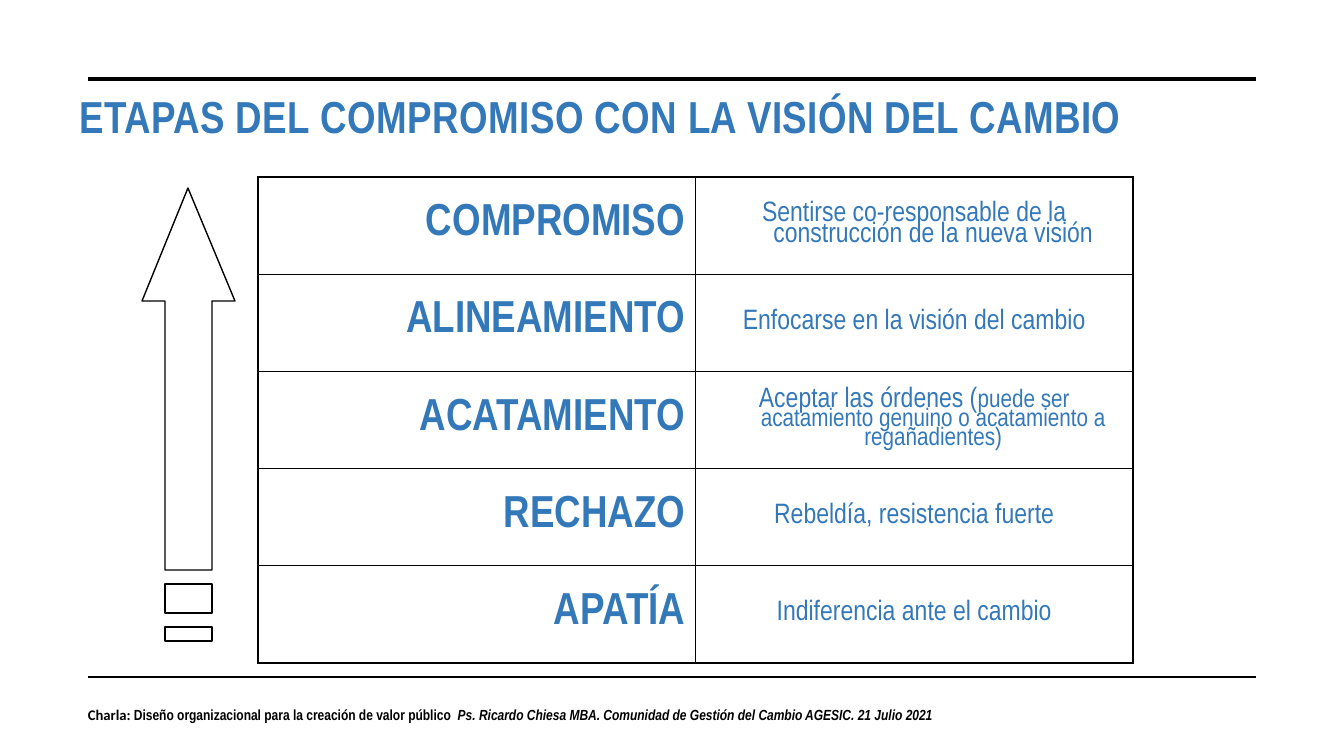
from lxml import etree
from pptx import Presentation
from pptx.dml.color import RGBColor
from pptx.enum.shapes import MSO_CONNECTOR
from pptx.enum.text import MSO_ANCHOR, MSO_AUTO_SIZE, PP_ALIGN
from pptx.oxml.ns import qn
from pptx.util import Pt

BLUE = RGBColor(0x33, 0x78, 0xB9)
BLACK = RGBColor(0, 0, 0)
WHITE = RGBColor(255, 255, 255)
LINE = MSO_CONNECTOR.STRAIGHT
TOP, MID = MSO_ANCHOR.TOP, MSO_ANCHOR.MIDDLE
CENTER, RIGHT = PP_ALIGN.CENTER, PP_ALIGN.RIGHT
FIXED = MSO_AUTO_SIZE.NONE
NARROW, SANS = "Arial Narrow", "Calibri"
SCALE = 914400 / 100.8

STAGES = [
    ("COMPROMISO", [("Sentirse co-responsable de la construcción de la nueva visión", 20)]),
    ("ALINEAMIENTO", [("Enfocarse en la visión del cambio", 20)]),
    ("ACATAMIENTO", [("Aceptar las órdenes (", 20),
                     ("puede ser acatamiento genuino o acatamiento a regañadientes)", 18)]),
    ("RECHAZO", [("Rebeldía, resistencia fuerte", 20)]),
    ("APATÍA", [("Indiferencia ante el cambio", 20)]),
]


def px(n):
    return round(n * SCALE)


def add_run(para, text, size, color, bold=False, italic=False, face=NARROW):
    run = para.add_run()
    run.text = text
    font = run.font
    font.name, font.size = face, Pt(size)
    font.bold, font.italic = bold, italic
    font.color.rgb = color
    return run


def add_rule(slide, x, y, w, weight):
    rule = slide.shapes.add_connector(LINE, px(x), px(y), px(x + w), px(y))
    rule.line.color.rgb = BLACK
    rule.line.width = Pt(weight)
    etree.SubElement(rule._element.spPr, qn("a:effectLst"))


def add_title(slide, x, y, w, h):
    title = slide.shapes.title
    title.left, title.top, title.width, title.height = map(px, (x, y, w, h))
    frame = title.text_frame
    frame.auto_size, frame.vertical_anchor = FIXED, TOP
    para = frame.paragraphs[0]
    para.alignment = CENTER
    run = add_run(para, "ETAPAS DEL COMPROMISO CON LA VISIÓN DEL CAMBIO", 32, BLUE, True)
    run.font._element.set("spc", "30")


def add_foot(slide, x, y, w, h):
    frame = slide.shapes.add_textbox(*map(px, (x, y, w, h))).text_frame
    frame.word_wrap = True
    para = frame.paragraphs[0]
    add_run(para, "Charla: ", 10.5, BLACK, True, face=SANS)
    add_run(para, "Diseño organizacional para la creación de valor público  ", 10.5, BLACK, True)
    add_run(para, "Ps. Ricardo Chiesa MBA. Comunidad de Gestión del Cambio AGESIC. 21 Julio 2021",
            10.5, BLACK, True, True)


def add_edges(cell):
    props = cell._tc.get_or_add_tcPr()
    for side in ("a:lnL", "a:lnR", "a:lnT", "a:lnB"):
        edge = etree.SubElement(props, qn(side), w=str(Pt(1)))
        fill = etree.SubElement(edge, qn("a:solidFill"))
        etree.SubElement(fill, qn("a:srgbClr"), val=str(BLACK))


def fill_cell(cell, align, runs, bold):
    add_edges(cell)
    cell.fill.background()
    cell.vertical_anchor = MID
    para = cell.text_frame.paragraphs[0]
    para.alignment, para.line_spacing = align, 0.8
    props = para._p.get_or_add_pPr()
    props.set("marL", str(px(38)))
    props.set("indent", str(px(-38)))
    for text, size in runs:
        add_run(para, text, size, BLUE, bold)


def add_stages(slide, x, y, w, h):
    table = slide.shapes.add_table(len(STAGES), 2, *map(px, (x, y, w, h))).table
    table.first_row = table.horz_banding = False
    for row, (name, runs) in enumerate(STAGES):
        fill_cell(table.cell(row, 0), RIGHT, [(name, 32)], True)
        fill_cell(table.cell(row, 1), CENTER, runs, False)


def add_arrow(slide, x, y, w, h):
    left, right, neck = w // 4, w - w // 4, 113
    tip = [(w // 2, 0), (w, neck), (right, neck), (right, h - 71),
           (left, h - 71), (left, neck), (0, neck)]
    bars = [[(left, top), (right, top), (right, end), (left, end)]
            for top, end in ((h - 57, h - 28), (h - 14, h))]
    pen = slide.shapes.build_freeform(x + tip[0][0], y, SCALE)
    for part in (tip, *bars):
        points = [(x + a, y + b) for a, b in part]
        if part is not tip:
            pen.move_to(*points[0])
        pen.add_line_segments(points[1:], close=True)
    arrow = pen.convert_to_shape()
    arrow.shadow.inherit = False
    arrow.fill.solid()
    arrow.fill.fore_color.rgb = WHITE
    arrow.line.color.rgb = BLACK
    arrow.line.width = Pt(1)


def main():
    deck = Presentation()
    deck.slide_width, deck.slide_height = px(1344), px(756)
    slide = deck.slides.add_slide(deck.slide_layouts[5])
    add_rule(slide, 88, 79, 1168, 3.5)
    add_rule(slide, 88, 677, 1168, 1)
    add_foot(slide, 78, 701, 961, 47)
    add_title(slide, 11, 84, 1180, 47)
    add_stages(slide, 258, 177, 875, 486)
    add_arrow(slide, 142, 188, 93, 453)
    deck.save("out.pptx")


if __name__ == "__main__":
    main()
